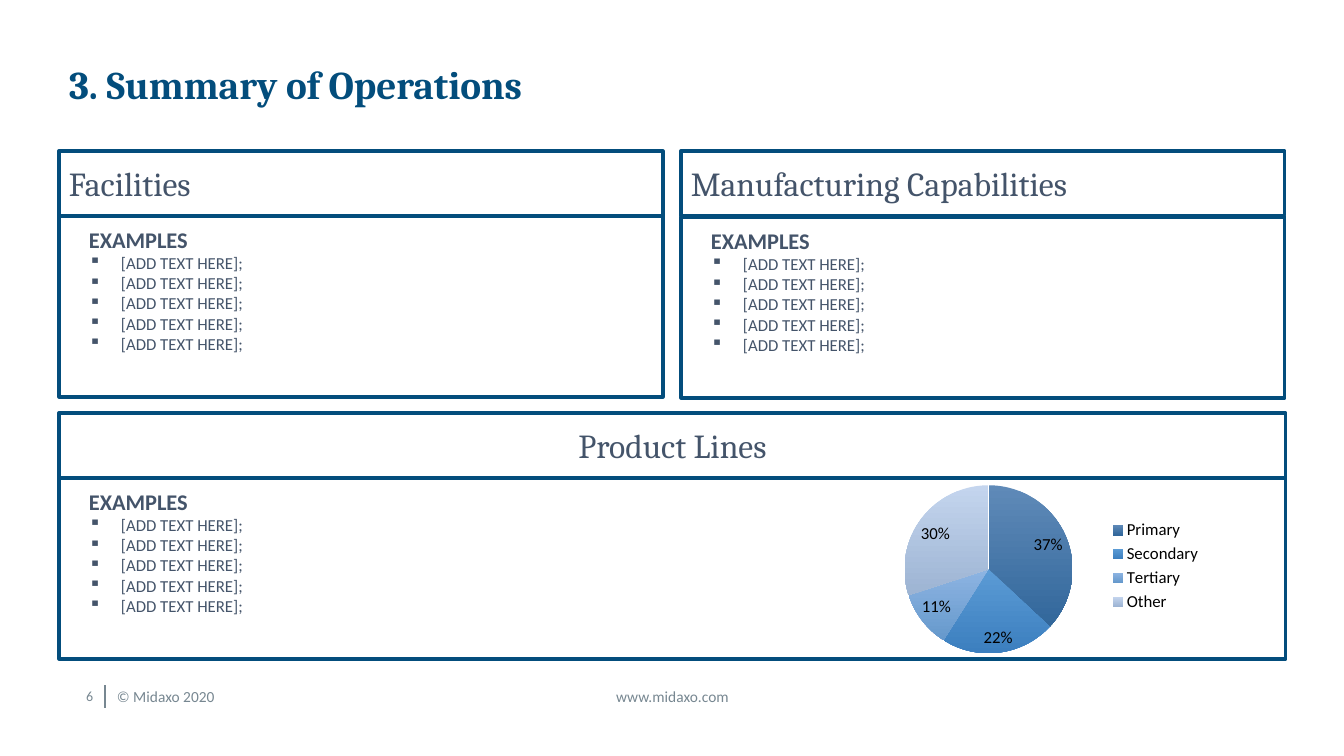
from lxml import etree
from pptx import Presentation, util as u
from pptx.chart import data
from pptx.dml.color import RGBColor
from pptx.enum import chart as ch, shapes, text
from pptx.oxml import ns, parse_xml

PX = 914400 / 100.8
NAVY, SLATE, GREY = "034D7C", "44546A", "778791"
LEFT, MID, RIGHT = text.PP_ALIGN.LEFT, text.PP_ALIGN.CENTER, text.PP_ALIGN.RIGHT


def px(*nums):
    return [u.Emu(round(n * PX)) for n in nums]


def style(para, size, face, hue, bold=False, align=LEFT):
    para.alignment = align
    for run in para.runs:
        run.font.size = u.Pt(size)
        run.font.name = face
        run.font.bold = bold
        run.font.color.rgb = RGBColor.from_string(hue)


deck = Presentation()
deck.slide_width, deck.slide_height = px(1344, 756)
slide = deck.slides.add_slide(deck.slide_layouts[5])

title = slide.shapes.title
title.left, title.top, title.width, title.height = px(59, 41, 1227, 86)
title.text_frame.text = "3. Summary of Operations"
title.text_frame.vertical_anchor = text.MSO_ANCHOR.MIDDLE
style(title.text_frame.paragraphs[0], 28, "Cambria", NAVY, True)

panels = [
    ("Facilities", 59, 151, 604, 216, LEFT),
    ("Product Lines", 59, 413, 1227, 478, MID),
    ("Manufacturing Capabilities", 681, 151, 604, 217, LEFT),
]
for name, x, y, wide, low, align in panels:
    body = slide.shapes.add_shape(shapes.MSO_SHAPE.RECTANGLE, *px(x, low, wide, 181))
    head = slide.shapes.add_shape(shapes.MSO_SHAPE.RECTANGLE, *px(x, y, wide, 65))
    for box in (body, head):
        box.shadow.inherit = False
        box.line.color.rgb = RGBColor.from_string(NAVY)
        box.line.width = u.Pt(2.25)
    body.fill.background()
    head.fill.solid()
    head.fill.fore_color.rgb = RGBColor.from_string("FFFFFF")

    head.text_frame.text = name
    head.text_frame.vertical_anchor = text.MSO_ANCHOR.MIDDLE
    style(head.text_frame.paragraphs[0], 24, "Cambria", SLATE, align=align)

    frame = body.text_frame
    frame.margin_left, frame.margin_top, frame.margin_right, frame.margin_bottom = px(30, 10, 30, 0)
    frame.vertical_anchor = text.MSO_ANCHOR.TOP
    frame.text = "EXAMPLES"
    style(frame.paragraphs[0], 16, "Calibri", SLATE, True)
    for _ in range(5):
        para = frame.add_paragraph()
        para.text = "[ADD TEXT HERE];"
        props = para._p.get_or_add_pPr()
        dent = px(32)[0]
        props.set("marL", str(dent))
        props.set("indent", str(-dent))
        etree.SubElement(props, ns.qn("a:buChar")).set("char", "▪")
        style(para, 12, "Calibri", SLATE)

share = data.CategoryChartData()
share.categories = ["Primary", "Secondary", "Tertiary", "Other"]
share.add_series("Series 1", (37, 22, 11, 30))
pie = slide.shapes.add_chart(ch.XL_CHART_TYPE.PIE, *px(756, 454, 456, 224), share).chart
pie.has_title = False
pie.font.name = "Calibri"
pie.font.size = u.Pt(12)
pie.font.color.rgb = RGBColor.from_string("000000")
pie.has_legend = True
pie.legend.position = ch.XL_LEGEND_POSITION.RIGHT
pie.legend.include_in_layout = False
pie.legend.font.size = u.Pt(12)

plot = pie.plots[0]
plot.vary_by_categories = True
plot.has_data_labels = True
tags = plot.data_labels
tags.show_value = False
tags.show_percentage = True
tags.number_format = "0%"
tags.number_format_is_linked = False
tags.position = ch.XL_LABEL_POSITION.BEST_FIT
tags.font.size = u.Pt(12)

hues = [("5F8AB8", "32679B"), ("5B9BD5", "3C7FBF"), ("8DB4E2", "6699CC"), ("C4D5EE", "9DB4D3")]
for i, pair in enumerate(hues):
    fill = plot.series[0].points[i].format.fill
    fill.gradient()
    fill.gradient_angle = 270
    for stop, hue in zip(fill.gradient_stops, pair):
        stop.color.rgb = RGBColor.from_string(hue)

area = pie._chartSpace.chart.plotArea
for old in area.findall(ns.qn("c:layout")):
    area.remove(old)
sides = "".join(
    f'<c:{tag} val="{val}"/>'
    for tag, val in [("layoutTarget", "inner"), ("xMode", "edge"), ("yMode", "edge"),
                     ("x", 0.31), ("y", 0.14), ("w", 0.4), ("h", 0.75)]
)
area.insert(0, parse_xml(
    f'<c:layout {ns.nsdecls("c")}><c:manualLayout>{sides}</c:manualLayout></c:layout>'))

rule = slide.shapes.add_connector(shapes.MSO_CONNECTOR.STRAIGHT, *px(105, 708, 105, 685))
rule.line.color.rgb = RGBColor.from_string(GREY)
rule.line.width = u.Pt(1)
etree.SubElement(rule._element.spPr, ns.qn("a:effectLst"))

feet = [
    ("6", 59, 676, 44, 40, 10, RIGHT),
    ("© Midaxo 2020", 107, 682, 224, 29, 11, LEFT),
    ("www.midaxo.com", 512, 682, 321, 29, 11, MID),
]
for words, x, y, wide, high, size, align in feet:
    frame = slide.shapes.add_textbox(*px(x, y, wide, high)).text_frame
    frame.word_wrap = True
    frame.vertical_anchor = text.MSO_ANCHOR.MIDDLE
    frame.text = words
    style(frame.paragraphs[0], size, "Calibri", GREY, align=align)

deck.save("out.pptx")
